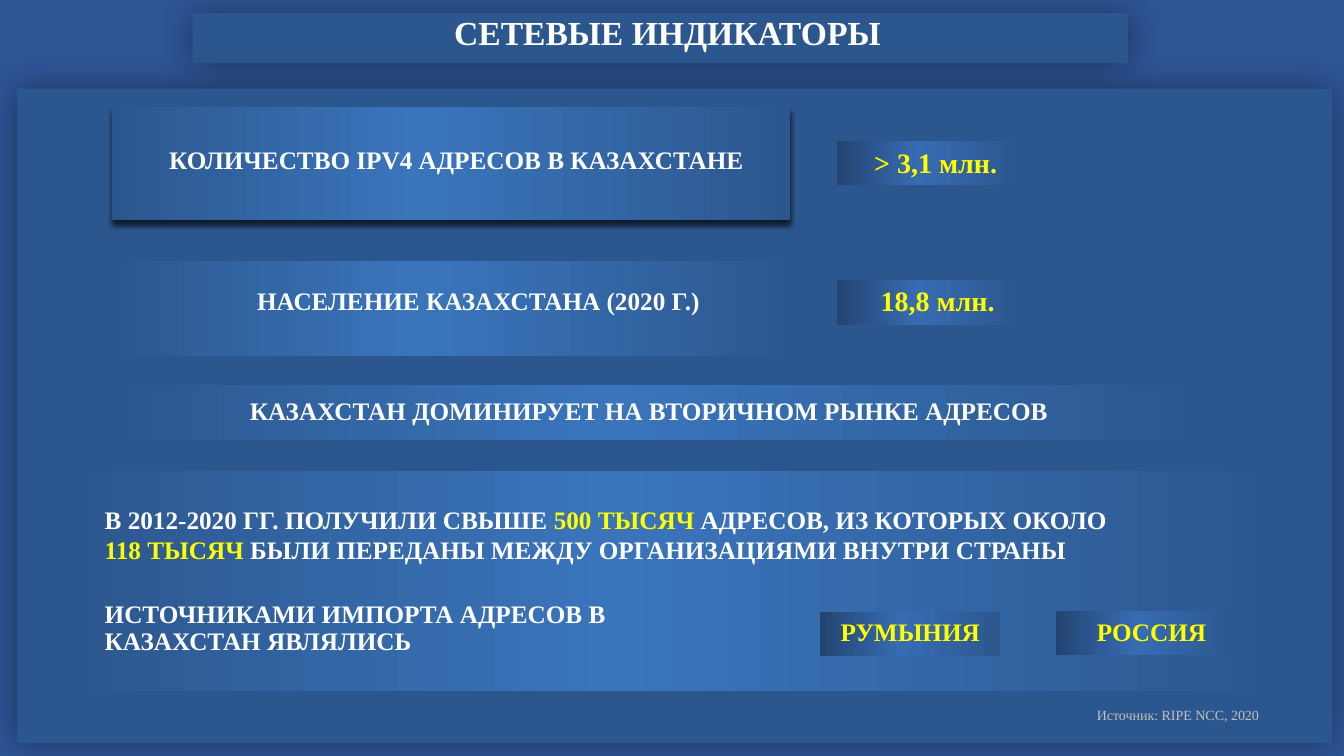
"""Build the slide about network indicators of Kazakhstan."""
from dataclasses import dataclass
import copy

import lxml.etree
import pptx
import pptx.dml.color
import pptx.enum.shapes
import pptx.enum.text
import pptx.oxml.ns
import pptx.util

Inches = pptx.util.Inches
ALIGN = pptx.enum.text.PP_ALIGN
qn = pptx.oxml.ns.qn


@dataclass(frozen=True)
class Theme:
    """Colours, font and type sizes."""
    font: str = "Times New Roman"
    background: str = "2F5597"
    panel: str = "2C578E"
    band: tuple[str, ...] = ("2C578E", "3A75BC", "2C578E")
    badge: tuple[str, ...] = ("234471", "376CB3", "2C578E")
    white: str = "FFFFFF"
    yellow: str = "FFFF00"
    grey: str = "BFBFBF"
    black: str = "000000"
    title: int = 24
    figure: int = 20
    body: int = 18
    note: int = 10


THEME = Theme()


@dataclass(frozen=True)
class Shadow:
    """An outer shadow, with lengths in points."""
    opacity: int
    blur: float
    distance: float = 0
    angle: int = 0


GLOW = Shadow(40, 24)
DROP = Shadow(67, 4, 4, 90)
TEXT_SHADOW = Shadow(60, 3, 3, 90)


@dataclass(frozen=True)
class Panel:
    """A rectangle with one colour or a three-colour gradient."""
    left: float
    top: float
    width: float
    height: float
    colours: tuple[str, ...] = THEME.band
    shadow: Shadow | None = None


@dataclass(frozen=True)
class Label:
    """A text of paragraphs made of (words, colour) spans."""
    left: float
    top: float
    width: float
    height: float
    lines: tuple[tuple[tuple[str, str], ...], ...]
    size: int = THEME.body
    align: ALIGN = ALIGN.LEFT
    spacing: float = 0.9
    bold: bool = True


def line(words: str, colour: str = THEME.white) -> tuple[tuple[tuple[str, str], ...], ...]:
    """Return a single paragraph in one colour."""
    return (((words, colour),),)


BADGE_WIDTH, BADGE_HEIGHT = 1.79, 0.44
BADGES = ((8.3, 1.4), (8.3, 2.78), (8.13, 6.07), (10.47, 6.06))
PANELS = (
    Panel(1.91, 0.13, 9.28, 0.5, (THEME.panel,), GLOW),
    Panel(0.17, 0.88, 13.04, 6.49, (THEME.panel,), GLOW),
    Panel(1.11, 1.06, 6.73, 1.12, shadow=DROP),
    Panel(1.11, 2.59, 6.81, 0.94),
    Panel(1.11, 3.82, 10.88, 0.55),
    Panel(0.64, 4.67, 12.11, 2.19),
    *(Panel(left, top, BADGE_WIDTH, BADGE_HEIGHT, THEME.badge) for left, top in BADGES),
)
TITLE = Label(2.57, 0.11, 8.1, 0.5, line("СЕТЕВЫЕ ИНДИКАТОРЫ"), THEME.title, ALIGN.CENTER)
LABELS = (
    Label(1.58, 1.38, 6.27, 0.38, line("КОЛИЧЕСТВО IPV4 АДРЕСОВ В КАЗАХСТАНЕ"), spacing=1.0),
    Label(8.3, 1.43, 1.96, 0.4, line("> 3,1 млн.", THEME.yellow), THEME.figure, ALIGN.CENTER),
    Label(2.19, 2.82, 5.11, 0.4, line("НАСЕЛЕНИЕ КАЗАХСТАНА (2020 Г.)"), align=ALIGN.CENTER),
    Label(8.32, 2.8, 1.96, 0.4, line("18,8 млн.", THEME.yellow), THEME.figure, ALIGN.CENTER),
    Label(2.38, 3.91, 8.48, 0.4, line("КАЗАХСТАН ДОМИНИРУЕТ НА ВТОРИЧНОМ РЫНКЕ АДРЕСОВ")),
    Label(0.94, 4.95, 10.72, 0.67, (
        (("В 2012-2020 ГГ. ПОЛУЧИЛИ СВЫШЕ ", THEME.white), ("500 ТЫСЯЧ ", THEME.yellow),
         ("АДРЕСОВ, ИЗ КОТОРЫХ ОКОЛО", THEME.white)),
        (("118 ТЫСЯЧ ", THEME.yellow),
         ("БЫЛИ ПЕРЕДАНЫ МЕЖДУ ОРГАНИЗАЦИЯМИ ВНУТРИ СТРАНЫ", THEME.white)),
    ), spacing=1.0),
    Label(0.94, 5.92, 6.11, 0.67, line("ИСТОЧНИКАМИ ИМПОРТА АДРЕСОВ В КАЗАХСТАН ЯВЛЯЛИСЬ")),
    Label(8.24, 6.1, 1.68, 0.36, line("РУМЫНИЯ", THEME.yellow)),
    Label(10.78, 6.1, 1.38, 0.36, line("РОССИЯ", THEME.yellow)),
    Label(10.78, 6.98, 2.09, 0.26, line("Источник: RIPE NCC, 2020", THEME.grey),
          THEME.note, bold=False),
)


def rgb(colour: str) -> pptx.dml.color.RGBColor:
    """Return a colour object for a hexadecimal string."""
    return pptx.dml.color.RGBColor.from_string(colour)


def add_shadow(effects: lxml.etree.ElementBase, shadow: Shadow) -> None:
    """Put an outer shadow in an effect list."""
    outer = lxml.etree.SubElement(
        effects, qn("a:outerShdw"), blurRad=str(int(pptx.util.Pt(shadow.blur))),
        dist=str(int(pptx.util.Pt(shadow.distance))), dir=str(shadow.angle * 60000),
        algn="ctr", rotWithShape="0")
    colour = lxml.etree.SubElement(outer, qn("a:srgbClr"), val=THEME.black)
    lxml.etree.SubElement(colour, qn("a:alpha"), val=str(shadow.opacity * 1000))


def add_panel(slide: pptx.slide.Slide, panel: Panel) -> None:
    """Draw a rectangle without outline."""
    box = slide.shapes.add_shape(
        pptx.enum.shapes.MSO_SHAPE.RECTANGLE, Inches(panel.left), Inches(panel.top),
        Inches(panel.width), Inches(panel.height))
    if len(panel.colours) == 1:
        box.fill.solid()
        box.fill.fore_color.rgb = rgb(panel.colours[0])
    else:
        box.fill.gradient()
        box.fill.gradient_angle = 0
        stops = box.element.find(".//" + qn("a:gsLst"))
        stops.append(copy.deepcopy(stops[0]))
        for stop, position, colour in zip(box.fill.gradient_stops, (0, 0.45, 1), panel.colours):
            stop.position = position
            stop.color.rgb = rgb(colour)
    box.line.fill.background()
    box.shadow.inherit = False
    if panel.shadow:
        add_shadow(box.element.spPr.find(qn("a:effectLst")), panel.shadow)


def write_label(box: pptx.shapes.autoshape.Shape, label: Label) -> None:
    """Place a text shape and fill it with formatted text."""
    box.left, box.top = Inches(label.left), Inches(label.top)
    box.width, box.height = Inches(label.width), Inches(label.height)
    frame = box.text_frame
    frame.word_wrap = True
    frame.auto_size = pptx.enum.text.MSO_AUTO_SIZE.NONE
    frame.vertical_anchor = pptx.enum.text.MSO_ANCHOR.TOP
    for index, spans in enumerate(label.lines):
        para = frame.add_paragraph() if index else frame.paragraphs[0]
        para.alignment = label.align
        para.line_spacing = label.spacing
        for words, colour in spans:
            span = para.add_run()
            span.text = words
            span.font.name = THEME.font
            span.font.size = pptx.util.Pt(label.size)
            span.font.bold = label.bold
            span.font.color.rgb = rgb(colour)
            effects = lxml.etree.Element(qn("a:effectLst"))
            span.font.fill
            span.font.color
            span_fill = para.runs[-1].font.color
            span_fill.rgb = rgb(colour)
            box.element.findall(".//" + qn("a:rPr"))[-1].find(qn("a:solidFill")).addnext(effects)
            add_shadow(effects, TEXT_SHADOW)


def main() -> None:
    """Build and save the deck."""
    deck = pptx.Presentation()
    deck.slide_width, deck.slide_height = Inches(13.33), Inches(7.5)
    page = deck.slides.add_slide(deck.slide_layouts.get_by_name("Title Only"))
    page.background.fill.solid()
    page.background.fill.fore_color.rgb = rgb(THEME.background)
    for panel in PANELS:
        add_panel(page, panel)
    title = page.shapes.title
    title.element.getparent().append(title.element)
    write_label(title, TITLE)
    for label in LABELS:
        write_label(page.shapes.add_textbox(0, 0, 0, 0), label)
    deck.save("out.pptx")


if __name__ == "__main__":
    main()
